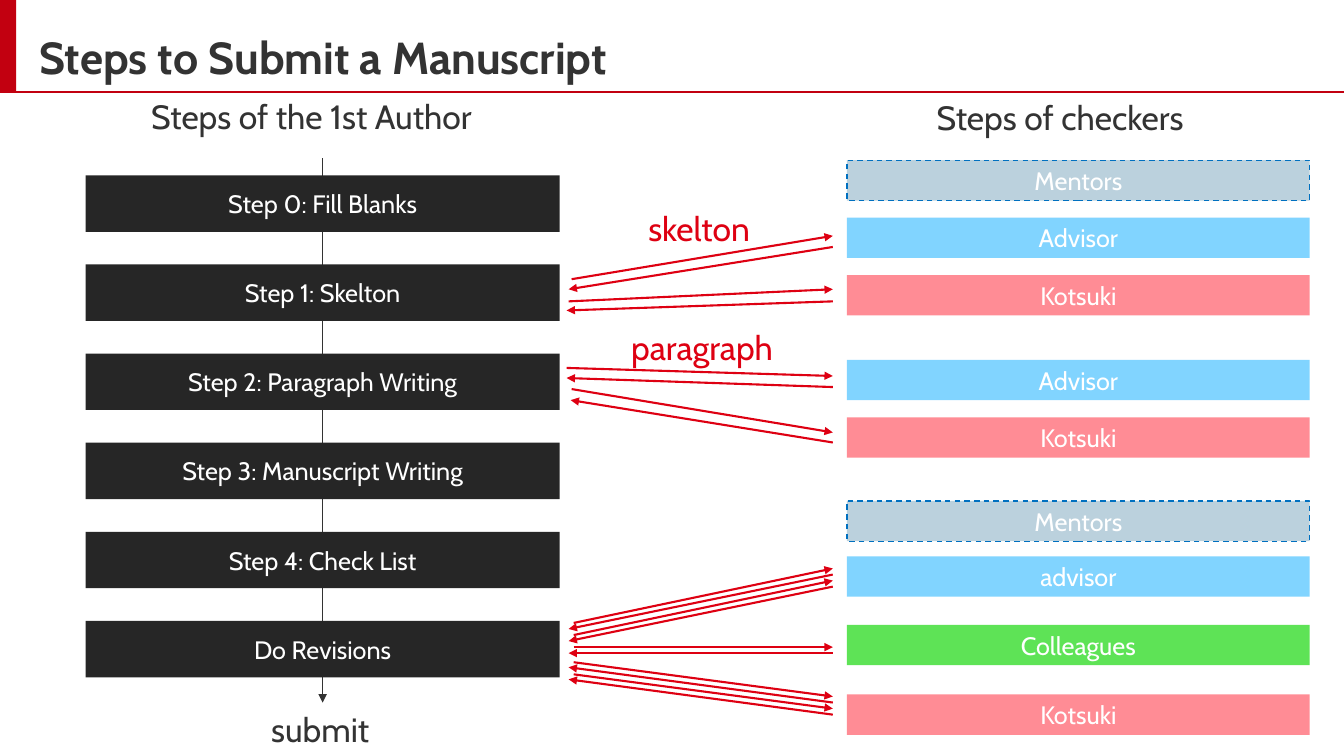
import dataclasses
import typing

import pptx
import pptx.dml.color
import pptx.enum.dml
import pptx.enum.shapes
import pptx.enum.text
import pptx.oxml
import pptx.oxml.ns
import pptx.util

Inches = pptx.util.Inches
Pt = pptx.util.Pt
Align = pptx.enum.text.PP_ALIGN
Anchor = pptx.enum.text.MSO_ANCHOR


@dataclasses.dataclass(frozen=True)
class Theme:
    font: str = "Cabin"
    ink: str = "333333"
    white: str = "FFFFFF"
    brand: str = "C20010"
    red: str = "DE0012"
    step: str = "262626"
    blue: str = "81D4FF"
    pink: str = "FF8C95"
    green: str = "5EE356"
    gray: str = "BBD1DD"
    edge: str = "0070C0"
    head: float = 32
    label: float = 24
    body: float = 18


THEME = Theme()


class Box(typing.NamedTuple):
    left: float
    top: float
    width: float
    height: float


class Bar(typing.NamedTuple):
    text: str
    box: Box
    fill: str
    edge: str = ""


class Label(typing.NamedTuple):
    text: str
    box: Box
    color: str = THEME.ink


class Trip(typing.NamedTuple):
    out_x: float
    out_y: float
    reach: float
    leave: float
    back_x: float
    back_y: float


STEPS = ["Step 0: Fill Blanks", "Step 1: Skelton", "Step 2: Paragraph Writing",
         "Step 3: Manuscript Writing", "Step 4: Check List", "Do Revisions"]
FIRST, LAST = 1.74, 6.16
PITCH = (LAST - FIRST) / (len(STEPS) - 1)


def check(text: str, top: float, fill: str, edge: str = "") -> Bar:
    return Bar(text, Box(8.4, top, 4.59, 0.4), fill, edge)


BARS = [Bar(text, Box(0.85, FIRST + i * PITCH, 4.7, 0.56), THEME.step)
        for i, text in enumerate(STEPS)]
BARS += [
    check("Mentors", 1.59, THEME.gray, THEME.edge),
    check("Advisor", 2.16, THEME.blue),
    check("Kotsuki", 2.73, THEME.pink),
    check("Advisor", 3.57, THEME.blue),
    check("Kotsuki", 4.14, THEME.pink),
    check("Mentors", 4.97, THEME.gray, THEME.edge),
    check("advisor", 5.52, THEME.blue),
    check("Colleagues", 6.2, THEME.green),
    check("Kotsuki", 6.89, THEME.pink),
]

LABELS = [
    Label("Steps of the 1st Author", Box(1.5, 0.95, 3.41, 0.4)),
    Label("Steps of checkers", Box(9.29, 0.96, 2.55, 0.4)),
    Label("submit", Box(2.69, 7.03, 1.02, 0.4)),
    Label("skelton", Box(6.43, 2.06, 1.06, 0.4), THEME.red),
    Label("paragraph", Box(6.26, 3.24, 1.53, 0.4), THEME.red),
]

FAR = 8.26
TRIPS = [
    Trip(5.67, 2.77, 2.34, 2.45, 5.64, 2.87),
    Trip(5.64, 2.99, 2.87, 2.99, 5.62, 3.08),
    Trip(5.62, 3.65, 3.73, 3.84, 5.62, 3.75),
    Trip(5.67, 3.86, 4.29, 4.39, 5.66, 3.97),
    Trip(5.69, 6.42, 6.42, 6.48, 5.64, 6.48),
]
for drop in (0, 0.12):
    TRIPS += [
        Trip(5.69, 6.18 + drop, 5.64 + drop, 5.7 + drop, 5.64, 6.24 + drop),
        Trip(5.69, 6.57 + drop, 6.91 + drop, 6.97 + drop, 5.64, 6.62 + drop),
    ]


def tint(code: str) -> pptx.dml.color.RGBColor:
    return pptx.dml.color.RGBColor.from_string(code)


def write(frame: typing.Any, text: str, *, size: float, color: str,
          bold: bool = False, align: typing.Any = Align.LEFT,
          anchor: typing.Any = Anchor.TOP, wrap: bool = True,
          space: float = 1.0) -> None:
    frame.word_wrap = wrap
    frame.vertical_anchor = anchor
    line = frame.paragraphs[0]
    line.alignment = align
    line.line_spacing = space
    run = line.add_run()
    run.text = text
    run.font.name = THEME.font
    run.font.size = Pt(size)
    run.font.bold = bold
    run.font.color.rgb = tint(color)


def place(box: Box) -> list[pptx.util.Length]:
    return [Inches(side) for side in box]


def block(slide: typing.Any, box: Box, fill: str, edge: str = "") -> typing.Any:
    shape = slide.shapes.add_shape(
        pptx.enum.shapes.MSO_SHAPE.RECTANGLE, *place(box))
    shape.shadow.inherit = False
    shape.fill.solid()
    shape.fill.fore_color.rgb = tint(fill)
    if edge:
        shape.line.color.rgb = tint(edge)
        shape.line.width = Pt(1)
        shape.line.dash_style = pptx.enum.dml.MSO_LINE.DASH
    else:
        shape.line.fill.background()
    return shape


def draw_bar(slide: typing.Any, bar: Bar) -> None:
    shape = block(slide, bar.box, bar.fill, bar.edge)
    write(shape.text_frame, bar.text, size=THEME.body, color=THEME.white,
          align=Align.CENTER, anchor=Anchor.MIDDLE)


def draw_label(slide: typing.Any, label: Label) -> None:
    frame = slide.shapes.add_textbox(*place(label.box)).text_frame
    frame.margin_left = frame.margin_right = 0
    frame.margin_top = frame.margin_bottom = 0
    write(frame, label.text, size=THEME.label, color=label.color, wrap=False)
    frame.auto_size = pptx.enum.text.MSO_AUTO_SIZE.SHAPE_TO_FIT_TEXT


def draw_line(slide: typing.Any, x1: float, y1: float, x2: float, y2: float,
              color: str, width: float, arrow: bool = True) -> None:
    line = slide.shapes.add_connector(
        pptx.enum.shapes.MSO_CONNECTOR.STRAIGHT,
        Inches(x1), Inches(y1), Inches(x2), Inches(y2))
    line.line.color.rgb = tint(color)
    line.line.width = Pt(width)
    if arrow:
        tail = pptx.oxml.parse_xml(
            f'<a:tailEnd {pptx.oxml.ns.nsdecls("a")} type="triangle"/>')
        line.line._get_or_add_ln().append(tail)
    line._element.spPr.append(pptx.oxml.parse_xml(
        f'<a:effectLst {pptx.oxml.ns.nsdecls("a")}/>'))


def draw_trip(slide: typing.Any, trip: Trip) -> None:
    draw_line(slide, trip.out_x, trip.out_y, FAR, trip.reach, THEME.red, 1.5)
    draw_line(slide, FAR, trip.leave, trip.back_x, trip.back_y, THEME.red, 1.5)


def main() -> None:
    deck = pptx.Presentation()
    deck.slide_width, deck.slide_height = Inches(13.33), Inches(7.5)
    slide = deck.slides.add_slide(deck.slide_layouts[6])
    block(slide, Box(0, 0, 0.16, 0.91), THEME.brand)
    draw_line(slide, 0, 0.91, 13.33, 0.91, THEME.brand, 1.25, arrow=False)
    title = slide.shapes.add_textbox(*place(Box(0.29, 0.24, 11.74, 0.71)))
    write(title.text_frame, "Steps to Submit a Manuscript", size=THEME.head,
          color=THEME.ink, bold=True, anchor=Anchor.MIDDLE, space=0.9)
    draw_line(slide, 3.2, 1.57, 3.2, 6.97, THEME.ink, 0.5)
    for bar in BARS:
        draw_bar(slide, bar)
    for label in LABELS:
        draw_label(slide, label)
    for trip in TRIPS:
        draw_trip(slide, trip)
    deck.save("out.pptx")


if __name__ == "__main__":
    main()
